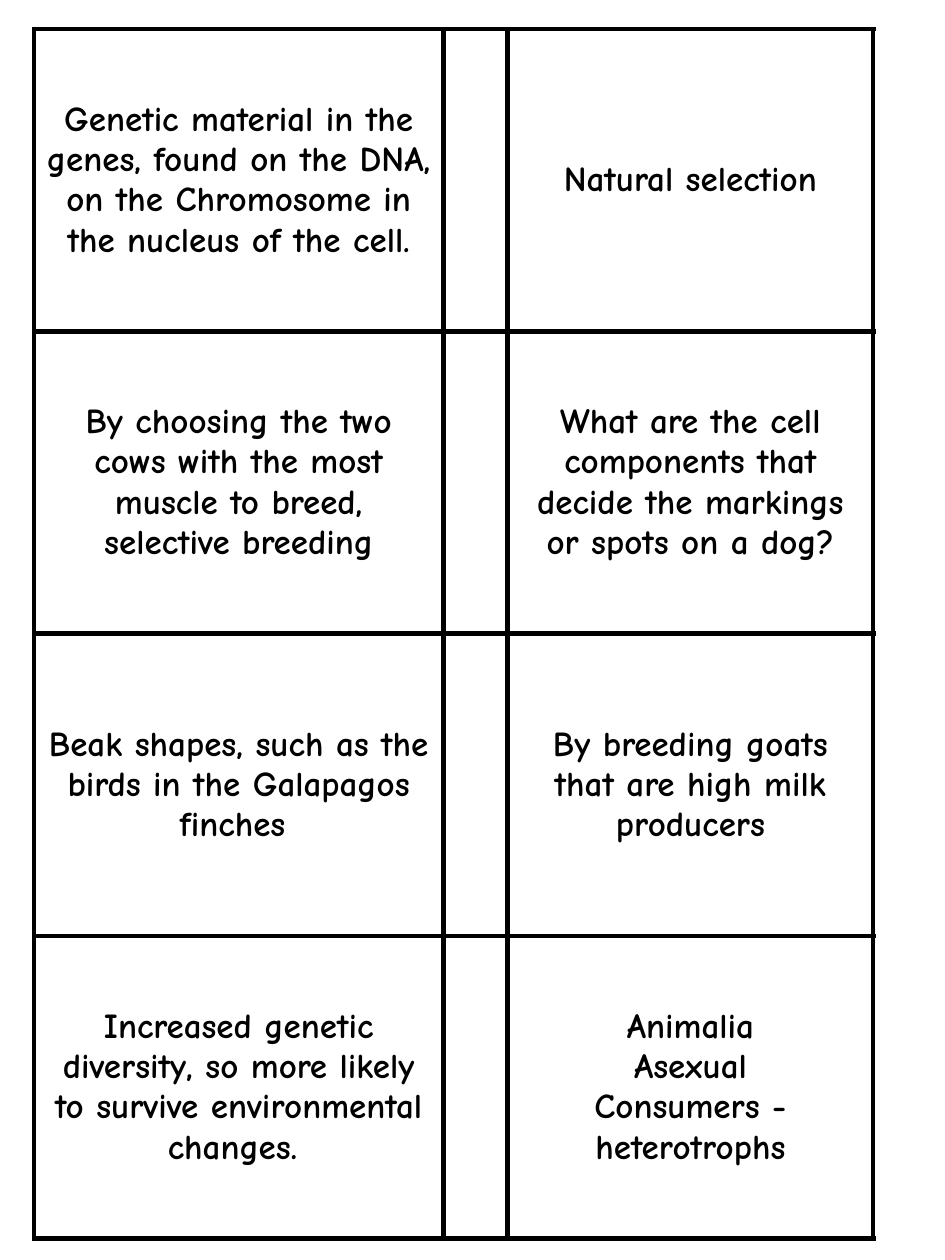
from dataclasses import dataclass

from lxml import etree
from pptx import Presentation
from pptx import util as u
from pptx.dml.color import RGBColor
from pptx.enum import text
from pptx.oxml.ns import qn

LEFT, TOP = 0.27, 0.23
COL_WIDTHS = (3.25, 0.51, 2.9)
ROW_HEIGHT = 2.4
BLACK, WHITE = "000000", "FFFFFF"
BORDER_PT = 3
FONT = {"name": "Comic Neue", "size": u.Pt(20), "bold": True}


@dataclass
class Card:
    row: int
    col: int
    lines: tuple[str, ...]


# Answer cards on both sides of the narrow gutter column
CARD_ROWS = [
    (("Genetic material in the genes, found on the DNA, on the Chromosome "
      "in the nucleus of the cell.",),
     ("Natural selection",)),
    (("By choosing the two cows with the most muscle to breed, selective breeding",),
     ("What are the cell components that decide the markings or spots on a dog?",)),
    (("Beak shapes, such as the birds in the Galapagos finches ",),
     ("By breeding goats that are high milk producers",)),
    (("Increased genetic diversity, so more likely to survive environmental changes. ",),
     ("Animalia", "Asexual", "Consumers - heterotrophs")),
]
CARDS = [Card(row, col, lines)
         for row, pair in enumerate(CARD_ROWS)
         for col, lines in zip((0, 2), pair)]


def rgb(color: str) -> RGBColor:
    return RGBColor.from_string(color)


def style_cell(cell) -> None:
    """Give a cell its borders and plain fill."""
    tc_pr = cell._tc.get_or_add_tcPr()
    for side in ("lnL", "lnR", "lnT", "lnB"):
        ln = etree.SubElement(tc_pr, qn(f"a:{side}"), w=str(u.Pt(BORDER_PT)))
        fill = etree.SubElement(ln, qn("a:solidFill"))
        etree.SubElement(fill, qn("a:srgbClr"), val=BLACK)
    cell.fill.solid()
    cell.fill.fore_color.rgb = rgb(WHITE)
    cell.vertical_anchor = text.MSO_ANCHOR.MIDDLE


def write_card(table, card: Card) -> None:
    tf = table.cell(card.row, card.col).text_frame
    tf.text = "\n".join(card.lines)
    for p in tf.paragraphs:
        p.alignment = text.PP_ALIGN.CENTER
        for r in p.runs:
            for key, value in FONT.items():
                setattr(r.font, key, value)
            r.font.color.rgb = rgb(BLACK)


def main() -> None:
    prs = Presentation()
    prs.slide_width, prs.slide_height = u.Inches(7.5), u.Inches(10)
    s = prs.slides.add_slide(prs.slide_layouts[6])

    # Card grid
    rows = len(CARD_ROWS)
    table = s.shapes.add_table(
        rows, len(COL_WIDTHS), u.Inches(LEFT), u.Inches(TOP),
        u.Inches(sum(COL_WIDTHS)), u.Inches(rows * ROW_HEIGHT)).table
    table.first_row = table.horz_banding = False
    for column, width in zip(table.columns, COL_WIDTHS):
        column.width = u.Inches(width)
    for cell in table.iter_cells():
        style_cell(cell)

    # Card wording
    for card in CARDS:
        write_card(table, card)

    prs.save("out.pptx")


if __name__ == "__main__":
    main()
